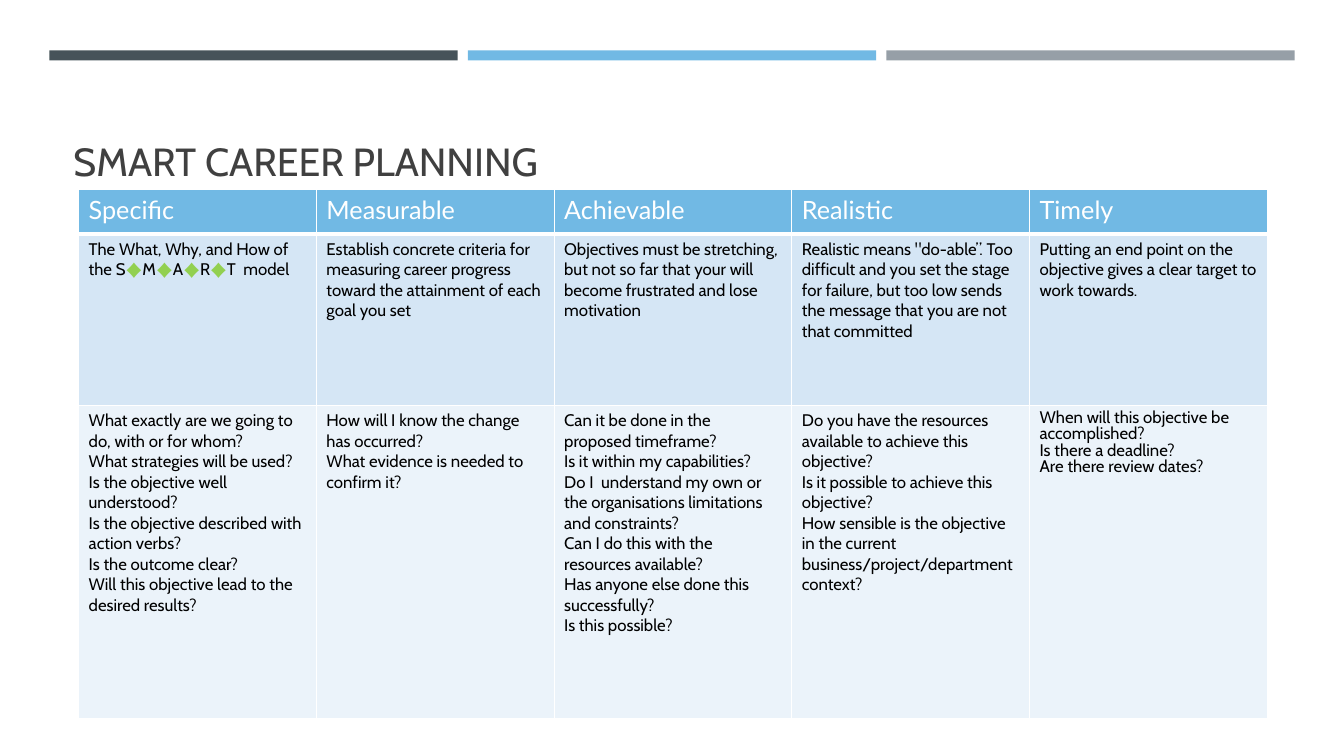
"""Build the SMART career planning slide."""
from lxml import etree
from pptx import Presentation
from pptx import util as u
from pptx.dml.color import RGBColor
from pptx.enum import shapes, text
from pptx.oxml import ns

DARK = RGBColor(0x46, 0x53, 0x59)
BLUE = RGBColor(0x71, 0xB9, 0xE4)
GREY = RGBColor(0x96, 0x9F, 0xA7)
TITLE_GREY = RGBColor(0x40, 0x40, 0x40)
PALE = RGBColor(0xD5, 0xE6, 0xF5)
PALEST = RGBColor(0xEB, 0xF3, 0xFA)
GREEN = RGBColor(0x92, 0xD0, 0x50)
WHITE = RGBColor(0xFF, 0xFF, 0xFF)
BLACK = RGBColor(0, 0, 0)

TITLE = "SMART CAREER PLANNING"
DIAMOND = "♦"
COLUMNS = [
    ("Specific",
     "The What, Why, and How of the S♦M♦A♦R♦T  model",
     ["What exactly are we going to do, with or for whom?",
      "What strategies will be used?",
      "Is the objective well understood?",
      "Is the objective described with action verbs?",
      "Is the outcome clear?",
      "Will this objective lead to the desired results?"]),
    ("Measurable",
     "Establish concrete criteria for measuring career progress toward the "
     "attainment of each goal you set",
     ["How will I know the change has occurred?",
      "What evidence is needed to confirm it?"]),
    ("Achievable",
     "Objectives must be stretching, but not so far that your will become "
     "frustrated and lose motivation",
     ["Can it be done in the proposed timeframe?",
      "Is it within my capabilities?",
      "Do I  understand my own or the organisations limitations and constraints?",
      "Can I do this with the resources available?",
      "Has anyone else done this successfully?",
      "Is this possible?"]),
    ("Realistic",
     "Realistic means \"do-able”. Too difficult and you set the stage for failure, "
     "but too low sends the message that you are not that committed",
     ["Do you have the resources available to achieve this objective?",
      "Is it possible to achieve this objective?",
      "How sensible is the objective in the current "
      "business/project/department context?"]),
    ("Timely",
     "Putting an end point on the objective gives a clear target to work towards.",
     ["When will this objective be accomplished?",
      "Is there a deadline?",
      "Are there review dates?"]),
]
ROWS = [
    {"height": 0.44, "fill": BLUE, "bottom": 3,
     "font": {"name": "Lato", "size": u.Pt(18), "color": WHITE}},
    {"height": 1.7, "fill": PALE, "bottom": 1,
     "font": {"name": "Cabin", "size": u.Pt(12), "color": BLACK}},
    {"height": 3.11, "fill": PALEST, "bottom": 1,
     "font": {"name": "Cabin", "size": u.Pt(12), "color": BLACK}},
]
TIGHT_COLUMN, TIGHT_SPACING = "Timely", 0.8
BAR_LEFT, BAR_TOP, BAR_WIDTH, BAR_HEIGHT, BAR_STEP = 0.49, 0.5, 4.05, 0.1, 4.15
TABLE_LEFT, TABLE_TOP, TABLE_WIDTH = 0.78, 1.88, 11.79


def add_run(paragraph, words, font):
    run = paragraph.add_run()
    run.text = words
    run.font.bold = False
    for name, value in font.items():
        if name == "color":
            run.font.color.rgb = value
        else:
            setattr(run.font, name, value)


def add_words(paragraph, words, font):
    for index, part in enumerate(words.split(DIAMOND)):
        if index:
            add_run(paragraph, DIAMOND, {**font, "color": GREEN})
        add_run(paragraph, part, font)


def add_borders(cell, top, bottom):
    properties = cell._tc.get_or_add_tcPr()
    for side, points in (("lnL", 1), ("lnR", 1), ("lnT", top), ("lnB", bottom)):
        line = etree.SubElement(properties, ns.qn(f"a:{side}"), w=str(u.Pt(points)))
        fill = etree.SubElement(line, ns.qn("a:solidFill"))
        etree.SubElement(fill, ns.qn("a:srgbClr"), val=str(WHITE))


def add_bars(slide):
    for index, color in enumerate((DARK, BLUE, GREY)):
        left = BAR_LEFT + index * BAR_STEP
        box = [u.Inches(n) for n in (left, BAR_TOP, BAR_WIDTH, BAR_HEIGHT)]
        bar = slide.shapes.add_shape(shapes.MSO_SHAPE.RECTANGLE, *box)
        bar.shadow.inherit = False
        bar.fill.solid()
        bar.fill.fore_color.rgb = color
        bar.line.fill.background()


def add_title(slide):
    box = [u.Inches(n) for n in (0.63, 0.8, 12.06, 1.08)]
    frame = slide.shapes.add_textbox(*box).text_frame
    frame.word_wrap = True
    frame.vertical_anchor = text.MSO_ANCHOR.BOTTOM
    font = {"name": "Cabin", "size": u.Pt(28), "color": TITLE_GREY}
    add_run(frame.paragraphs[0], TITLE, font)


def add_planning_table(slide):
    height = sum(row["height"] for row in ROWS)
    box = [u.Inches(n) for n in (TABLE_LEFT, TABLE_TOP, TABLE_WIDTH, height)]
    table = slide.shapes.add_table(len(ROWS), len(COLUMNS), *box).table
    for row_index, row in enumerate(ROWS):
        table.rows[row_index].height = u.Inches(row["height"])
        top = ROWS[row_index - 1]["bottom"] if row_index else 1
        for column_index, column in enumerate(COLUMNS):
            cell = table.cell(row_index, column_index)
            add_borders(cell, top, row["bottom"])
            cell.fill.solid()
            cell.fill.fore_color.rgb = row["fill"]
            content = column[row_index]
            lines = content if isinstance(content, list) else [content]
            frame = cell.text_frame
            for line_index, words in enumerate(lines):
                paragraph = frame.add_paragraph() if line_index else frame.paragraphs[0]
                if column[0] == TIGHT_COLUMN and lines is content:
                    paragraph.line_spacing = TIGHT_SPACING
                add_words(paragraph, words, row["font"])


def main():
    presentation = Presentation()
    presentation.slide_width = u.Inches(13.33)
    presentation.slide_height = u.Inches(7.5)
    slide = presentation.slides.add_slide(presentation.slide_layouts[6])
    add_bars(slide)
    add_title(slide)
    add_planning_table(slide)
    presentation.save("out.pptx")


if __name__ == "__main__":
    main()
